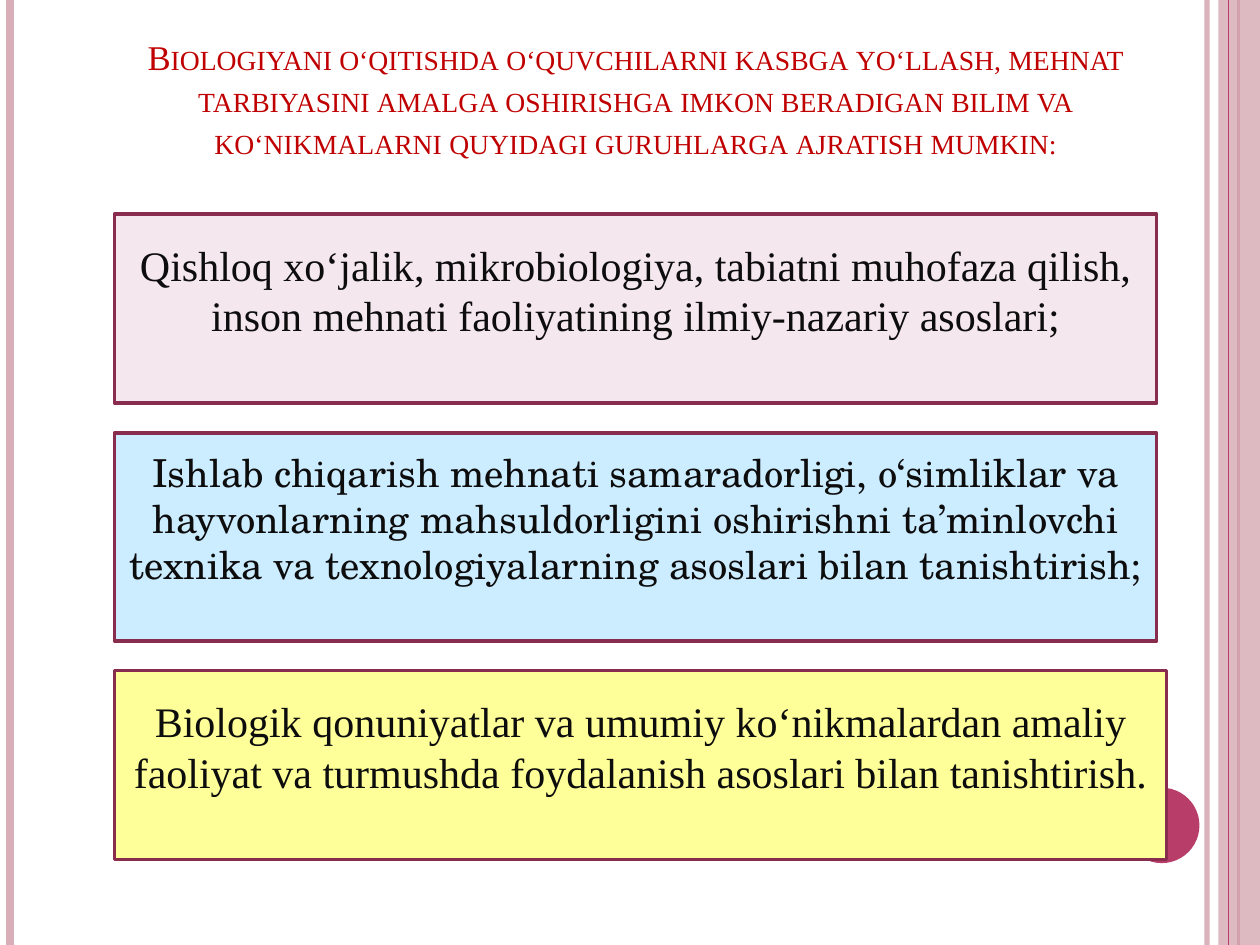
from lxml.etree import SubElement
from pptx import Presentation
from pptx.dml.color import RGBColor
from pptx.enum.shapes import MSO_CONNECTOR as CONN, MSO_SHAPE as SHAPE
from pptx.enum.text import MSO_ANCHOR as ANCHOR, PP_ALIGN as ALIGN
from pptx.oxml.ns import qn
from pptx.util import Cm, Pt

COLORS = {
    "rose": "D8AFB9", "berry": "B83D68", "wine": "882D4D",
    "red": "C00000", "ink": "0D0D0D",
    "pink": "F4E7ED", "sky": "CCECFF", "yellow": "FFFF99",
}
SERIF, SCHOOL = "Times New Roman", "TeX Gyre Schola"
WIDTH, HEIGHT = 25.4, 19.05

TITLE = ("Biologiyani o‘qitishda o‘quvchilarni kasbga yo‘llash, mehnat tarbiyasini "
         "amalga oshirishga imkon beradigan bilim va ko‘nikmalarni quyidagi "
         "guruhlarga ajratish mumkin:")
# text, fill, font, size, line pitch, width, height
GROUPS = [
    ("Qishloq xo‘jalik, mikrobiologiya, tabiatni muhofaza qilish, inson mehnati "
     "faoliyatining ilmiy-nazariy asoslari;", "pink", SERIF, 24, Pt(28.8), 21.01, 3.81),
    ("Ishlab chiqarish mehnati samaradorligi, o‘simliklar va hayvonlarning "
     "mahsuldorligini oshirishni ta’minlovchi texnika va texnologiyalarning asoslari "
     "bilan tanishtirish;", "sky", SCHOOL, 22, None, 21.01, 4.19),
    ("Biologik qonuniyatlar va umumiy ko‘nikmalardan amaliy faoliyat va turmushda "
     "foydalanish asoslari bilan tanishtirish.", "yellow", SERIF, 24, Pt(28.8), 21.21, 3.81),
]


def rgb(name):
    return RGBColor.from_string(COLORS[name])


def set_alpha(fmt_element, percent):
    """Make the solid colour inside the element partly transparent."""
    clr = next(fmt_element.iter(qn("a:srgbClr")))
    SubElement(clr, qn("a:alpha"), val=str(percent * 1000))


def add_text(tf, text, font, size, color, pitch):
    p = tf.paragraphs[0]
    p.alignment = ALIGN.CENTER
    p.line_spacing = pitch
    r = p.add_run()
    r.text = text
    r.font.name, r.font.size = font, Pt(size)
    r.font.color.rgb = rgb(color)
    return r


def add_block(s, kind, x, y, w, h, fill):
    sp = s.shapes.add_shape(kind, Cm(x), Cm(y), Cm(w), Cm(h))
    sp.shadow.inherit = False
    sp.fill.solid()
    sp.fill.fore_color.rgb = rgb(fill)
    sp.line.fill.background()
    return sp


def add_rule(s, x, color, width):
    """Draw a vertical line over the full slide height."""
    line = s.shapes.add_connector(CONN.STRAIGHT, Cm(x), 0, Cm(x), Cm(HEIGHT))
    line.line.color.rgb = rgb(color)
    line.line.width = Pt(width)
    SubElement(line._element.spPr, qn("a:effectLst"))
    return line


def add_frame(s):
    """Place the side stripes and the round page marker."""
    set_alpha(add_rule(s, 24.33, "rose", 3)._element.spPr, 93)
    add_rule(s, 0.2, "rose", 4.5)
    add_rule(s, 24.97, "berry", 1.5)
    band = add_block(s, SHAPE.RECTANGLE, 24.56, 0, WIDTH - 24.56, HEIGHT, "rose")
    set_alpha(band._element.spPr, 87)
    add_rule(s, 24.77, "berry", 0.75)
    add_block(s, SHAPE.OVAL, 22.66, 15.88, 1.52, 1.52, "berry")


def set_title(s, x, y, w, h):
    sp = s.shapes.title
    sp.left, sp.top, sp.width, sp.height = Cm(x), Cm(y), Cm(w), Cm(h)
    tf = sp.text_frame
    tf.word_wrap = True
    tf.vertical_anchor = ANCHOR.BOTTOM
    tf.margin_bottom = Cm(1.24)
    r = add_text(tf, TITLE, SERIF, 19.8, "red", Pt(24))
    r.font._element.set("cap", "small")


def add_groups(s, x, y, gap):
    """Stack the group boxes downwards with equal gaps."""
    for text, fill, font, size, pitch, w, h in GROUPS:
        sp = add_block(s, SHAPE.RECTANGLE, x, y, w, h, fill)
        sp.line.color.rgb = rgb("wine")
        sp.line.width = Pt(2)
        tf = sp.text_frame
        tf.word_wrap = True
        tf.vertical_anchor = ANCHOR.MIDDLE
        tf.margin_left = tf.margin_right = Cm(0.2)
        tf.margin_bottom = Cm(0.89)
        add_text(tf, text, font, size, "ink", pitch)
        y += h + gap


def main():
    prs = Presentation()
    prs.slide_width, prs.slide_height = Cm(WIDTH), Cm(HEIGHT)
    s = prs.slides.add_slide(prs.slide_layouts[5])
    add_frame(s)
    set_title(s, 1.7, 1.32, 22.23, 3.18)
    add_groups(s, 2.31, 4.32, 0.6)
    prs.save("out.pptx")


if __name__ == "__main__":
    main()
